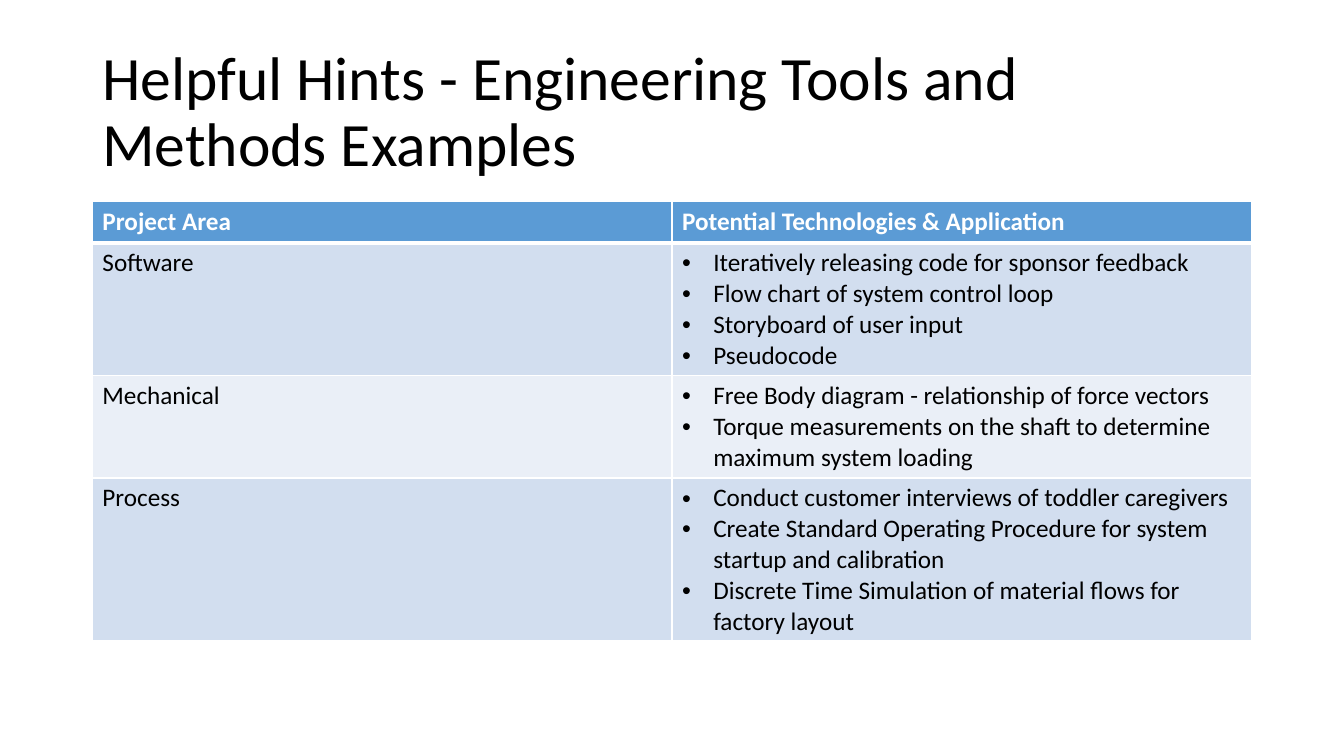
from lxml import etree
from pptx import Presentation
from pptx.dml.color import RGBColor
from pptx.enum.text import MSO_ANCHOR
from pptx.oxml.ns import qn
from pptx.util import Inches, Pt

MIDDLE = MSO_ANCHOR.MIDDLE

# The page is a grid of 160 columns by 90 rows, each unit 1/12 inch
UNIT = Inches(1) / 12
PAGE_COLUMNS, PAGE_ROWS = 160, 90
LEFT, WIDTH = 11, 138

COLORS = {
    "text": "000000",
    "white": "FFFFFF",
    "header": "5B9BD5",
    "odd": "D2DEEF",
    "even": "EAEFF7",
}

TITLE = "Helpful Hints - Engineering Tools and Methods Examples"
HEADINGS = ["Project Area", "Potential Technologies & Application"]
# Area, row height in grid rows, technologies
AREAS = [
    ("Software", 15.8, [
        "Iteratively releasing code for sponsor feedback",
        "Flow chart of system control loop",
        "Storyboard of user input",
        "Pseudocode",
    ]),
    ("Mechanical", 12.2, [
        "Free Body diagram - relationship of force vectors",
        "Torque measurements on the shaft to determine maximum system loading",
    ]),
    ("Process", 19.4, [
        "Conduct customer interviews of toddler caregivers",
        "Create Standard Operating Procedure for system startup and calibration",
        "Discrete Time Simulation of material flows for factory layout",
    ]),
]
HEADER_HEIGHT = 4.9


def grid(units):
    return round(units * UNIT)


def color(name):
    return RGBColor.from_string(COLORS[name])


class HintsPage:
    font = "Calibri"
    title_size = 44
    body_size = 18
    bullet_indent = Inches(0.31)

    def __init__(self, deck):
        self.page = deck.slides.add_slide(deck.slide_layouts[6])

    def add_run(self, para, text, size, ink="text", bold=False):
        span = para.add_run()
        span.text = text
        span.font.name = self.font
        span.font.size = Pt(size)
        span.font.bold = bold
        span.font.color.rgb = color(ink)

    def add_title(self, text, left, top, width, height):
        box = self.page.shapes.add_textbox(*map(grid, (left, top, width, height)))
        frame = box.text_frame
        frame.word_wrap = True
        frame.vertical_anchor = MIDDLE
        para = frame.paragraphs[0]
        para.line_spacing = 0.9
        self.add_run(para, text, self.title_size)

    def add_table(self, left, top, width, heights, column_count):
        frame = self.page.shapes.add_table(
            len(heights), column_count,
            *map(grid, (left, top, width, sum(heights))))
        table = frame.table
        for column in table.columns:
            column.width = grid(width / column_count)
        for row, height in zip(table.rows, heights):
            row.height = grid(height)
        return table

    def fill_cell(self, cell, lines, fill, ink="text", bold=False,
                  bullets=False, bottom=1):
        cell.fill.solid()
        cell.fill.fore_color.rgb = color(fill)
        self.add_borders(cell, bottom)
        frame = cell.text_frame
        for index, line in enumerate(lines):
            para = frame.add_paragraph() if index else frame.paragraphs[0]
            if bullets:
                self.add_bullet(para)
            self.add_run(para, line, self.body_size, ink, bold)

    def add_bullet(self, para):
        properties = para._p.get_or_add_pPr()
        properties.set("marL", str(self.bullet_indent))
        properties.set("indent", str(-self.bullet_indent))
        font = etree.SubElement(properties, qn("a:buFont"))
        font.set("typeface", "Arial")
        etree.SubElement(properties, qn("a:buChar")).set("char", "•")

    def add_borders(self, cell, bottom):
        properties = cell._tc.get_or_add_tcPr()
        sides = {"lnL": 1, "lnR": 1, "lnT": 1, "lnB": bottom}
        for index, (side, points) in enumerate(sides.items()):
            line = etree.Element(qn(f"a:{side}"), w=str(Pt(points)))
            fill = etree.SubElement(line, qn("a:solidFill"))
            etree.SubElement(fill, qn("a:srgbClr")).set("val", COLORS["white"])
            properties.insert(index, line)


def main():
    deck = Presentation()
    deck.slide_width = grid(PAGE_COLUMNS)
    deck.slide_height = grid(PAGE_ROWS)
    hints = HintsPage(deck)

    # Title
    hints.add_title(TITLE, LEFT, 4.8, WIDTH, 17.4)

    # Table header
    heights = [HEADER_HEIGHT] + [height for _, height, _ in AREAS]
    table = hints.add_table(LEFT, 24, WIDTH, heights, len(HEADINGS))
    for column, heading in enumerate(HEADINGS):
        hints.fill_cell(table.cell(0, column), [heading], "header",
                        ink="white", bold=True, bottom=3)

    # Project areas
    for row, (area, _, technologies) in enumerate(AREAS, start=1):
        band = "odd" if row % 2 else "even"
        top = 3 if row == 1 else 1
        hints.fill_cell(table.cell(row, 0), [area], band)
        hints.fill_cell(table.cell(row, 1), technologies, band, bullets=True)
        if top > 1:
            for cell in table.rows[row].cells:
                edge = cell._tc.tcPr.find(qn("a:lnT"))
                edge.set("w", str(Pt(top)))

    deck.save("out.pptx")


if __name__ == "__main__":
    main()
